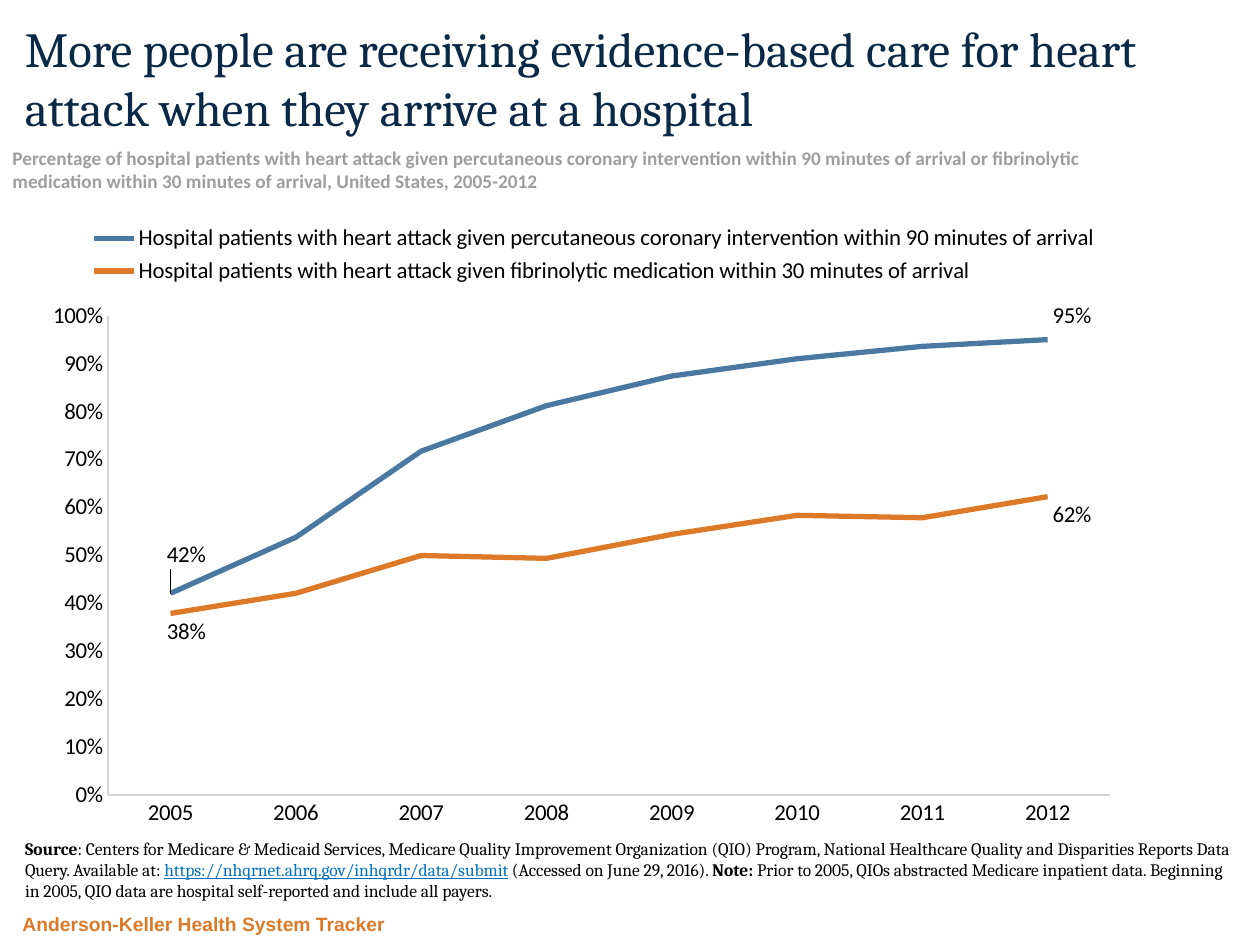
import pptx
import pptx.util
import pptx.dml.color
import pptx.chart.data
import pptx.enum.chart
import pptx.enum.text
import pptx.oxml
from pptx.util import Inches

COLORS = {"title": "092947", "subtitle": "9E9E9E", "text": "000000", "link": "0072C0",
          "axis": "D3D3D3", "blue": "4B78A1", "orange": "DC7A27"}

TITLE = ("More people are receiving evidence-based care for heart attack "
         "when they arrive at a hospital")
SUBTITLE = [
    "Percentage of hospital patients with heart attack given percutaneous coronary "
    "intervention within 90 minutes of arrival or fibrinolytic",
    "medication within 30 minutes of arrival, United States, 2005-2012",
]
# Runs of the source note: text and what sets it apart
SOURCE_NOTE = [
    ("Source", {"bold": True}),
    (": Centers for Medicare & Medicaid Services, Medicare Quality Improvement Organization "
     "(QIO) Program, National Healthcare Quality and Disparities Reports Data Query. "
     "Available at: ", {}),
    ("https://nhqrnet.ahrq.gov/inhqrdr/data/submit", {"color": "link", "underline": True}),
    (" (Accessed on June 29, 2016). ", {}),
    ("Note:", {"bold": True}),
    (" Prior to 2005, QIOs abstracted Medicare inpatient data. Beginning in 2005, QIO data "
     "are hospital self-reported and include all payers.", {}),
]
TRACKER = "Anderson-Keller Health System Tracker"

YEARS = [str(year) for year in range(2005, 2013)]
LABEL = pptx.enum.chart.XL_LABEL_POSITION
# Labels: point index, side, shift right and down as a share of the chart
TREATMENTS = [
    {"name": "Hospital patients with heart attack given percutaneous coronary intervention "
             "within 90 minutes of arrival",
     "shares": [0.421, 0.538, 0.718, 0.813, 0.875, 0.911, 0.937, 0.951],
     "color": "blue",
     "labels": [(0, LABEL.ABOVE, 0.014, -0.03), (7, LABEL.RIGHT, 0, -0.037)]},
    {"name": "Hospital patients with heart attack given fibrinolytic medication "
             "within 30 minutes of arrival",
     "shares": [0.379, 0.421, 0.5, 0.494, 0.544, 0.584, 0.579, 0.623],
     "color": "orange",
     "labels": [(0, LABEL.BELOW, 0.014, 0), (7, LABEL.RIGHT, 0, 0.03)]},
]


def rgb(name):
    return pptx.dml.color.RGBColor.from_string(COLORS[name])


def style_font(font, size, face, color="text", bold=False, underline=False):
    font.size, font.name = pptx.util.Pt(size), face
    font.bold, font.underline = bold, underline
    font.color.rgb = rgb(color)


def add_text(slide, box, paragraphs, anchor="TOP", wrap=True, **style):
    """Each paragraph is a string or a list of (text, style changes)."""
    frame = slide.shapes.add_textbox(*map(Inches, box)).text_frame
    frame.word_wrap = wrap
    frame.vertical_anchor = pptx.enum.text.MSO_ANCHOR[anchor]
    for i, runs in enumerate(paragraphs):
        paragraph = frame.add_paragraph() if i else frame.paragraphs[0]
        for text, changes in [(runs, {})] if isinstance(runs, str) else runs:
            run = paragraph.add_run()
            run.text = text
            style_font(run.font, **{**style, **changes})
    return frame


def manual_layout(**values):
    parts = "".join(f'<c:{tag} val="{value}"/>' for tag, value in values.items())
    return pptx.oxml.parse_xml(
        '<c:layout xmlns:c="http://schemas.openxmlformats.org/drawingml/2006/chart">'
        f"<c:manualLayout>{parts}</c:manualLayout></c:layout>")


def add_care_chart(slide, box):
    data = pptx.chart.data.CategoryChartData(number_format="0%")
    data.categories = YEARS
    for treatment in TREATMENTS:
        data.add_series(treatment["name"], treatment["shares"])
    chart = slide.shapes.add_chart(
        pptx.enum.chart.XL_CHART_TYPE.LINE, *map(Inches, box), data).chart
    style_font(chart.font, 13, "Calibri")
    chart.has_title = False
    chart.has_legend = True
    chart.legend.position = pptx.enum.chart.XL_LEGEND_POSITION.TOP
    chart.legend.include_in_layout = False

    # Axes: lines start on the value axis
    for axis in (chart.category_axis, chart.value_axis):
        axis.has_major_gridlines = False
        axis.major_tick_mark = axis.minor_tick_mark = pptx.enum.chart.XL_TICK_MARK.NONE
        axis.format.line.color.rgb = rgb("axis")
        axis.format.line.width = pptx.util.Pt(0.75)
    scale = chart.value_axis
    scale.minimum_scale, scale.maximum_scale, scale.major_unit = 0, 1, 0.1
    scale.tick_labels.number_format = "0%"
    scale.tick_labels.number_format_is_linked = False
    for between in chart._chartSpace.xpath("//c:valAx/c:crossBetween"):
        between.set("val", "midCat")

    # Plot area
    plot_area = chart._chartSpace.xpath("//c:plotArea")[0]
    for old in plot_area.xpath("c:layout"):
        plot_area.remove(old)
    plot_area.insert(0, manual_layout(layoutTarget="inner", xMode="edge", yMode="edge",
                                      x=0.068, y=0.168, w=0.892, h=0.76))

    # Lines with labels at both ends
    chart.plots[0].vary_by_categories = False
    for series, treatment in zip(chart.plots[0].series, TREATMENTS):
        series.smooth = False
        series.marker.style = pptx.enum.chart.XL_MARKER_STYLE.NONE
        series.format.line.color.rgb = rgb(treatment["color"])
        series.format.line.width = pptx.util.Pt(3)
        series.data_labels.show_value = False
        for index, side, dx, dy in treatment["labels"]:
            label = series.points[index].data_label
            style_font(label.font, 13, "Calibri")
            label.position = side
            node = series._element.xpath(f"c:dLbls/c:dLbl[c:idx/@val='{index}']")[0]
            node.insert(1, manual_layout(x=dx, y=dy))


def main():
    deck = pptx.Presentation()
    deck.slide_width, deck.slide_height = Inches(10), Inches(7.5)
    slide = deck.slides.add_slide(deck.slide_layouts[6])

    add_text(slide, (0.08, 7.17, 7.98, 0.3), [TRACKER], anchor="BOTTOM",
             size=11, face="Arial", color="orange", bold=True)
    add_text(slide, (0.1, 6.4, 9.82, 0.8), [SOURCE_NOTE], anchor="BOTTOM",
             size=10, face="Cambria")
    add_text(slide, (0.1, 0.1, 9.8, 1), [TITLE], size=28, face="Cambria", color="title")
    subtitle = add_text(slide, (0, 1.11, 8.81, 0.47), SUBTITLE, wrap=False,
                        size=11, face="Calibri", color="subtitle", bold=True)
    subtitle.auto_size = pptx.enum.text.MSO_AUTO_SIZE.SHAPE_TO_FIT_TEXT
    add_care_chart(slide, (0.25, 1.67, 8.92, 5))

    deck.save("out.pptx")


if __name__ == "__main__":
    main()
